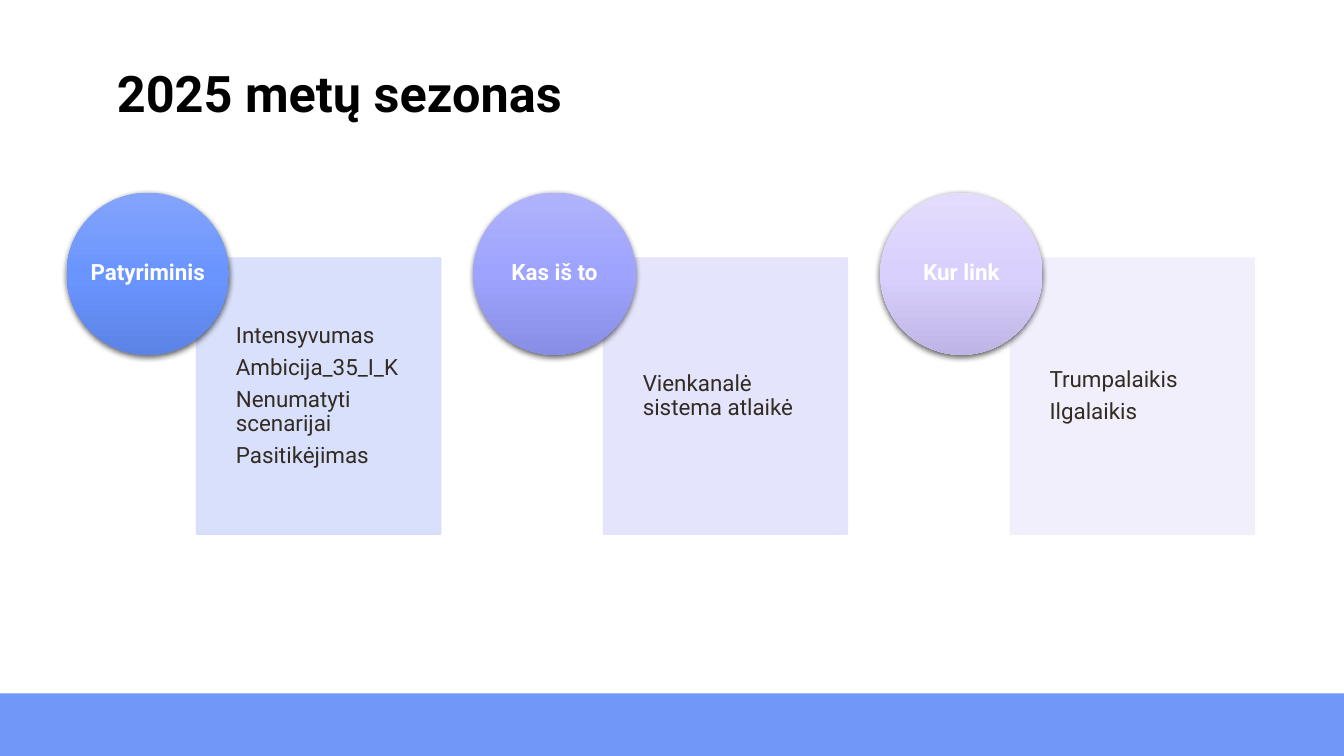
from copy import deepcopy
from dataclasses import dataclass

from lxml.etree import SubElement
from pptx import Presentation
from pptx.dml.color import RGBColor
from pptx.enum.shapes import MSO_SHAPE
from pptx.enum.text import MSO_ANCHOR, PP_ALIGN
from pptx.oxml.ns import qn
from pptx.util import Inches, Pt

WHITE = RGBColor(0xFF, 0xFF, 0xFF)
BLACK = RGBColor(0x00, 0x00, 0x00)
INK = RGBColor(0x32, 0x2C, 0x23)
BAND = RGBColor(0x71, 0x98, 0xF8)

# Text formats
TITLE = {"name": "Roboto", "size": Pt(36), "bold": True}
LABEL = {"name": "Roboto", "size": Pt(16), "bold": True}
LIST = {"name": "Roboto", "size": Pt(16), "bold": False}

# Grid
LEFT, STEP = 0.66, 4.035
DISC_TOP, DISC = 1.91, 1.61
CARD_IN, CARD_TOP, CARD_W, CARD_H = 1.29, 2.56, 2.42, 2.74


@dataclass
class Topic:
    label: str
    lines: list[str]
    tint: RGBColor
    shades: list[RGBColor]


TOPICS = [
    Topic("Patyriminis",
          ["Intensyvumas", "Ambicija_35_I_K", "Nenumatyti scenarijai", "Pasitikėjimas"],
          RGBColor(0xD5, 0xDD, 0xFC),
          [RGBColor(0x84, 0xA4, 0xFB), RGBColor(0x6A, 0x95, 0xFF), RGBColor(0x5C, 0x83, 0xE5)]),
    Topic("Kas iš to", ["Vienkanalė sistema atlaikė"],
          RGBColor(0xE2, 0xE2, 0xFD),
          [RGBColor(0xB0, 0xB3, 0xFB), RGBColor(0x9E, 0xA3, 0xFD), RGBColor(0x88, 0x8D, 0xE5)]),
    Topic("Kur link", ["Trumpalaikis", "Ilgalaikis"],
          RGBColor(0xF1, 0xEE, 0xFD),
          [RGBColor(0xE3, 0xDC, 0xFC), RGBColor(0xD9, 0xD0, 0xFD), RGBColor(0xBE, 0xB5, 0xE5)]),
]


def write(shape, lines: list[str], style: dict, color: RGBColor,
          align=PP_ALIGN.LEFT, pad=(0, 0, 0, 0), after: float = 0) -> None:
    frame = shape.text_frame
    frame.word_wrap = True
    frame.vertical_anchor = MSO_ANCHOR.MIDDLE
    for side, gap in zip(("left", "top", "right", "bottom"), pad):
        setattr(frame, f"margin_{side}", Inches(gap))
    frame.text = "\n".join(lines)
    for para in frame.paragraphs:
        para.alignment = align
        para.line_spacing = 0.9
        para.space_before = Pt(0)
        para.space_after = Pt(after)
        for key, value in style.items():
            setattr(para.font, key, value)
        para.font.color.rgb = color


def add_box(slide, kind, left: float, top: float, width: float, height: float):
    box = slide.shapes.add_shape(
        kind, Inches(left), Inches(top), Inches(width), Inches(height))
    box.shadow.inherit = False
    box.line.fill.background()
    return box


def add_card(slide, topic: Topic, left: float) -> None:
    card = add_box(slide, MSO_SHAPE.RECTANGLE, left, CARD_TOP, CARD_W, CARD_H)
    card.line.width = Pt(1)
    for fill in (card.fill, card.line.fill):
        fill.solid()
        fill.fore_color.rgb = topic.tint
    for color in card.element.spPr.iter(qn("a:srgbClr")):
        SubElement(color, qn("a:alpha"), val="90000")
    write(card, topic.lines, LIST, INK, pad=(0.39, 0.12, 0.12, 0.12), after=5.6)


def add_disc(slide, topic: Topic, left: float) -> None:
    disc = add_box(slide, MSO_SHAPE.OVAL, left, DISC_TOP, DISC, DISC)
    # Three-stop gradient, top to bottom
    disc.fill.gradient()
    disc.fill.gradient_angle = 270
    stops = disc.element.spPr.find(".//" + qn("a:gsLst"))
    stops.insert(1, deepcopy(stops[0]))
    for stop, at, shade in zip(disc.fill.gradient_stops, (0, 0.5, 1), topic.shades):
        stop.position = at
        stop.color.rgb = shade
    # Soft shadow below
    glow = SubElement(disc.element.spPr.find(qn("a:effectLst")), qn("a:outerShdw"),
                      blurRad=str(Pt(4.5)), dist=str(Pt(1.5)), dir="5400000",
                      rotWithShape="0")
    black = SubElement(glow, qn("a:srgbClr"), val="000000")
    SubElement(black, qn("a:alpha"), val="63000")
    write(disc, [topic.label], LABEL, WHITE, PP_ALIGN.CENTER, after=5.6)


def main() -> None:
    deck = Presentation()
    deck.slide_width, deck.slide_height = Inches(13.33), Inches(7.5)
    slide = deck.slides.add_slide(deck.slide_layouts[5])

    # Bottom band
    band = add_box(slide, MSO_SHAPE.RECTANGLE, 0, 6.88, 13.33, 0.62)
    band.fill.solid()
    band.fill.fore_color.rgb = BAND

    # Title
    title = slide.shapes.title
    title.left, title.top = Inches(1.16), Inches(0.37)
    title.width, title.height = Inches(11.02), Inches(1.16)
    write(title, ["2025 metų sezonas"], TITLE, BLACK)

    # Topics
    for col, topic in enumerate(TOPICS):
        left = LEFT + col * STEP
        add_card(slide, topic, left + CARD_IN)
        add_disc(slide, topic, left)

    deck.save("out.pptx")


if __name__ == "__main__":
    main()
